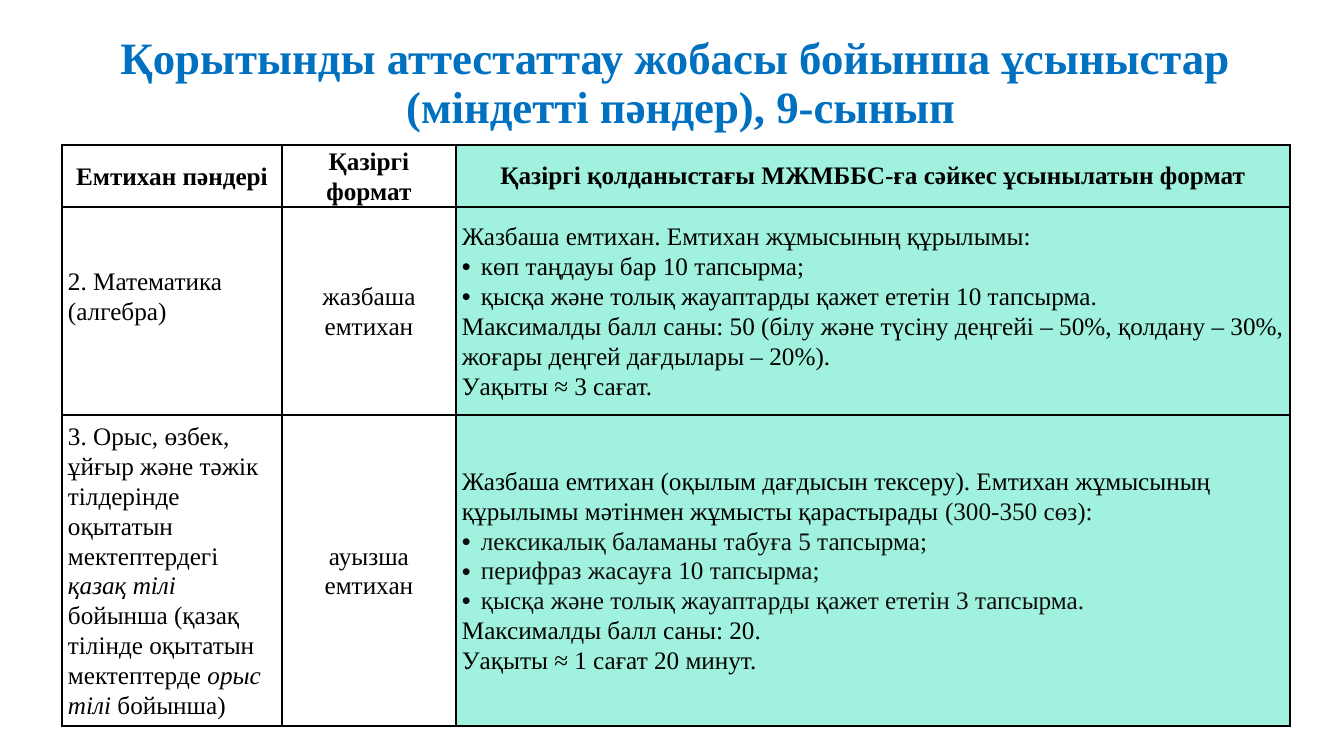
from lxml.etree import SubElement
from pptx import Presentation
from pptx.dml.color import RGBColor
from pptx.enum.text import MSO_ANCHOR, PP_ALIGN
from pptx.oxml import parse_xml
from pptx.oxml.ns import nsdecls, qn
from pptx.util import Pt

PX = 12192000 / 1344  # one px in EMU
FONT = "Times New Roman"
COLORS = {
    "title": "0070C0",
    "text": "000000",
    "soft": "0D0D0D",
    "border": "000000",
    "plain": "FFFFFF",
    "proposal": "A0F1DE",
}

# Format values
LEFT = {"alignment": PP_ALIGN.LEFT, "line_spacing": 1.07}
CENTER = {"alignment": PP_ALIGN.CENTER, "line_spacing": 1.07}
JUSTIFY = {"alignment": PP_ALIGN.JUSTIFY, "line_spacing": 1.07}
SINGLE = {"alignment": PP_ALIGN.CENTER, "line_spacing": 1.0}
TITLE = {"alignment": PP_ALIGN.CENTER, "line_spacing": 0.9}
BULLET_INDENT = 19

BODY = {"name": FONT, "size": Pt(18), "bold": False, "italic": False}
BOLD = {**BODY, "bold": True}
ITALIC = {**BODY, "italic": True}
HEADING = {**BOLD, "size": Pt(32)}

# Table geometry
COLUMNS = [220, 174, 834]
ROWS = [62, 208, 311]


def px(length):
    return round(length * PX)


def set_format(target, values):
    for name, value in values.items():
        setattr(target, name, value)


def add_run(paragraph, text, font=BODY, color="text"):
    run = paragraph.add_run()
    run.text = text
    set_format(run.font, font)
    run.font.color.rgb = RGBColor.from_string(COLORS[color])


def add_bullet(paragraph):
    properties = paragraph._p.get_or_add_pPr()
    properties.set("marL", str(px(BULLET_INDENT)))
    properties.set("indent", str(-px(BULLET_INDENT)))
    SubElement(properties, qn("a:buFont"), typeface="Arial")
    SubElement(properties, qn("a:buChar"), char="•")


def write_paragraphs(frame, paragraphs):
    """Each paragraph is (format, bulleted, runs); a run is (text, font, color)."""
    for index, (layout, bulleted, runs) in enumerate(paragraphs):
        paragraph = frame.add_paragraph() if index else frame.paragraphs[0]
        set_format(paragraph, layout)
        if bulleted:
            add_bullet(paragraph)
        for run in runs:
            add_run(paragraph, *run)


def line(text, layout=JUSTIFY, font=BODY):
    return layout, False, [(text, font)]


def bullet(text, color="text", layout=JUSTIFY):
    return layout, True, [(text, BODY, color)]


def add_borders(cell):
    properties = cell._tc.get_or_add_tcPr()
    for index, side in enumerate("LRTB"):
        properties.insert(index, parse_xml(
            f'<a:ln{side} {nsdecls("a")} w="{Pt(1)}"><a:solidFill>'
            f'<a:srgbClr val="{COLORS["border"]}"/></a:solidFill></a:ln{side}>'))


def add_title(slide, lines):
    box = slide.shapes.add_textbox(px(49), px(31), px(1264), px(68))
    frame = box.text_frame
    set_format(frame, {"word_wrap": True, "vertical_anchor": MSO_ANCHOR.TOP})
    paragraph = frame.paragraphs[0]
    set_format(paragraph, TITLE)
    for index, text in enumerate(lines):
        if index:
            paragraph.add_line_break()
        add_run(paragraph, text, HEADING, "title")


def add_exam_table(slide, contents):
    table = slide.shapes.add_table(
        len(ROWS), len(COLUMNS), px(62), px(145), px(sum(COLUMNS)), px(sum(ROWS))).table
    set_format(table, {"first_row": False, "horz_banding": False})
    for column, width in zip(table.columns, COLUMNS):
        column.width = px(width)
    for row, height, row_contents in zip(table.rows, ROWS, contents):
        row.height = px(height)
        for index, (cell, paragraphs) in enumerate(zip(row.cells, row_contents)):
            set_format(cell, {
                "vertical_anchor": MSO_ANCHOR.MIDDLE,
                "margin_left": px(6), "margin_right": px(6),
                "margin_top": 0, "margin_bottom": 0})
            fill = "proposal" if index == len(COLUMNS) - 1 else "plain"
            cell.fill.solid()
            cell.fill.fore_color.rgb = RGBColor.from_string(COLORS[fill])
            add_borders(cell)
            write_paragraphs(cell.text_frame, paragraphs)
    return table


def main():
    deck = Presentation()
    set_format(deck, {"slide_width": px(1344), "slide_height": px(756)})
    slide = deck.slides.add_slide(deck.slide_layouts[6])

    # Header row
    header = [
        [line("Емтихан пәндері", CENTER, BOLD)],
        [line("Қазіргі формат", CENTER, BOLD)],
        [line("Қазіргі қолданыстағы МЖМББС-ға сәйкес ұсынылатын формат", SINGLE, BOLD)],
    ]

    # Mathematics exam
    mathematics = [
        [line("2. Математика (алгебра)", LEFT)],
        [line("жазбаша емтихан", CENTER)],
        [
            line("Жазбаша емтихан. Емтихан жұмысының құрылымы:"),
            bullet("көп таңдауы бар 10 тапсырма;"),
            bullet("қысқа және толық жауаптарды қажет ететін 10 тапсырма."),
            line("Максималды балл саны: 50 (білу және түсіну деңгейі – 50%, "
                 "қолдану – 30%, жоғары деңгей дағдылары – 20%)."),
            line("Уақыты ≈ 3 сағат."),
        ],
    ]

    # Language exam
    language = [
        [(LEFT, False, [
            ("3. Орыс, өзбек, ұйғыр және тәжік тілдерінде оқытатын мектептердегі ",),
            ("қазақ тілі", ITALIC),
            (" бойынша (қазақ тілінде оқытатын мектептерде ",),
            ("орыс тілі ", ITALIC),
            ("бойынша)",),
        ])],
        [line("ауызша емтихан", CENTER)],
        [
            (LEFT, False, [
                ("Жазбаша емтихан (оқылым дағдысын тексеру). Емтихан жұмысының "
                 "құрылымы мәтінмен жұмысты қарастырады ",),
                ("(300-350 сөз):", BODY, "soft"),
            ]),
            bullet("лексикалық баламаны табуға 5 тапсырма;", "soft", LEFT),
            bullet("перифраз жасауға 10 тапсырма;", "soft", LEFT),
            bullet("қысқа және толық жауаптарды қажет ететін 3 тапсырма.", "soft", LEFT),
            line("Максималды балл саны: 20."),
            line("Уақыты ≈ 1 сағат 20 минут."),
        ],
    ]

    exams = add_exam_table(slide, [header, mathematics, language])
    exams.cell(1, 0).margin_bottom = px(30)  # raises the subject above the middle

    # Title
    add_title(slide, ["Қорытынды аттестаттау жобасы бойынша ұсыныстар ",
                      "(міндетті пәндер), 9-сынып"])
    deck.save("out.pptx")


if __name__ == "__main__":
    main()
